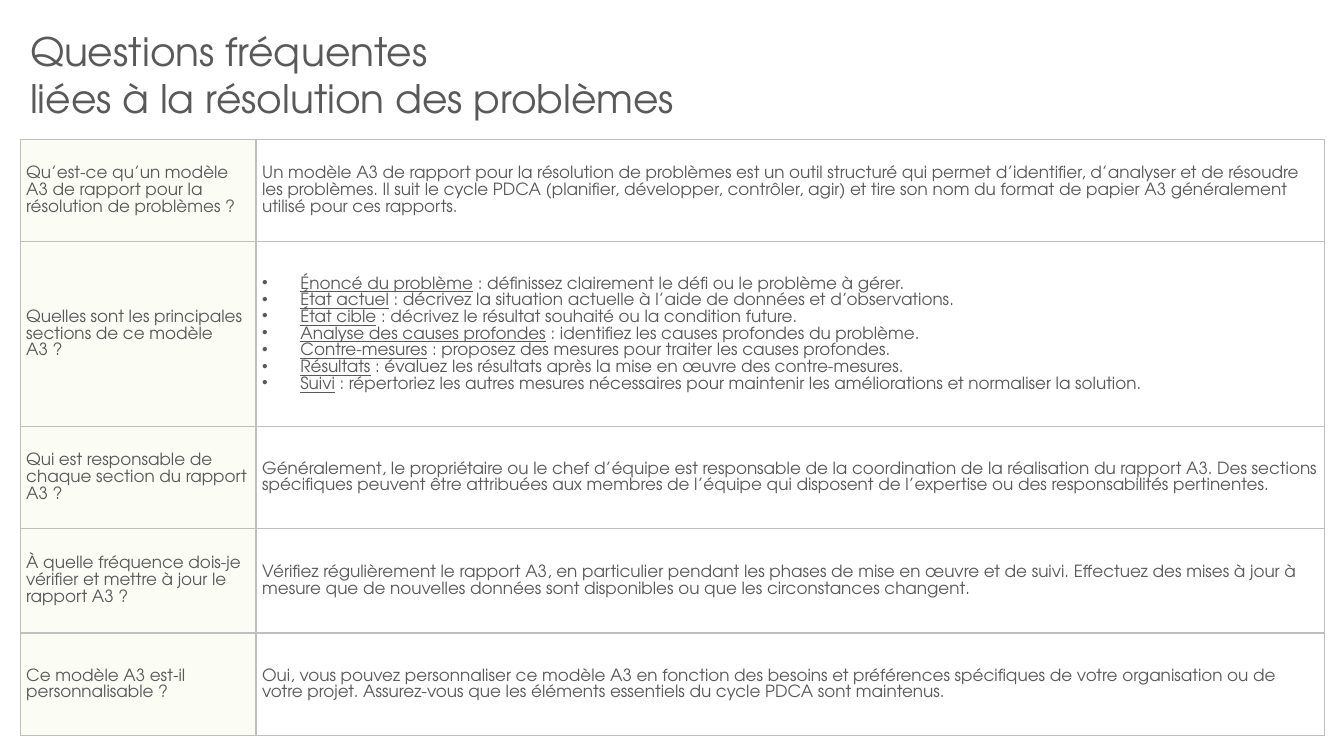
import pptx
import pptx.dml.color
import pptx.enum.text
import pptx.oxml
import pptx.oxml.ns
import pptx.util

Inches = pptx.util.Inches
Pt = pptx.util.Pt

TITLE = ["Questions fréquentes", "liées à la résolution des problèmes"]
COLUMN_WIDTHS = [2.34, 10.6]
ROW_HEIGHTS = [1.02, 1.83, 1.01, 1.04, 1.02]

# Each answer is a paragraph, or a list of (section, explanation) bullets
FAQ = [
    ("Qu’est-ce qu’un modèle A3 de rapport pour la résolution de problèmes ?",
     "Un modèle A3 de rapport pour la résolution de problèmes est un outil structuré qui permet "
     "d’identifier, d’analyser et de résoudre les problèmes. Il suit le cycle PDCA (planifier, "
     "développer, contrôler, agir) et tire son nom du format de papier A3 généralement utilisé "
     "pour ces rapports."),
    ("Quelles sont les principales sections de ce modèle A3 ?", [
        ("Énoncé du problème", "définissez clairement le défi ou le problème à gérer."),
        ("État actuel", "décrivez la situation actuelle à l’aide de données et d’observations."),
        ("État cible", "décrivez le résultat souhaité ou la condition future."),
        ("Analyse des causes profondes", "identifiez les causes profondes du problème."),
        ("Contre-mesures", "proposez des mesures pour traiter les causes profondes."),
        ("Résultats", "évaluez les résultats après la mise en œuvre des contre-mesures."),
        ("Suivi", "répertoriez les autres mesures nécessaires pour maintenir les améliorations "
                  "et normaliser la solution."),
    ]),
    ("Qui est responsable de chaque section du rapport A3 ?",
     "Généralement, le propriétaire ou le chef d’équipe est responsable de la coordination de la "
     "réalisation du rapport A3. Des sections spécifiques peuvent être attribuées aux membres de "
     "l’équipe qui disposent de l’expertise ou des responsabilités pertinentes."),
    ("À quelle fréquence dois-je vérifier et mettre à jour le rapport A3 ?",
     "Vérifiez régulièrement le rapport A3, en particulier pendant les phases de mise en œuvre et "
     "de suivi. Effectuez des mises à jour à mesure que de nouvelles données sont disponibles ou "
     "que les circonstances changent."),
    ("Ce modèle A3 est-il personnalisable ?",
     "Oui, vous pouvez personnaliser ce modèle A3 en fonction des besoins et préférences "
     "spécifiques de votre organisation ou de votre projet. Assurez-vous que les éléments "
     "essentiels du cycle PDCA sont maintenus."),
]


def color(hex_value):
    return pptx.dml.color.RGBColor.from_string(hex_value)


def apply(target, values):
    for name, value in values.items():
        setattr(target, name, value)


class FaqSlide:
    font = "TeX Gyre Adventor"
    ink, rule, question_fill = "595959", "BFBFBF", "FBFDF5"
    cell_format = {
        "vertical_anchor": pptx.enum.text.MSO_ANCHOR.MIDDLE,
        "margin_left": Inches(0.06), "margin_right": Inches(0.06),
        "margin_top": 0, "margin_bottom": 0,
    }

    def __init__(self, slide):
        self.slide = slide

    def run(self, paragraph, text, size, underline=False):
        run = paragraph.add_run()
        run.text = text
        apply(run.font, {"name": self.font, "size": Pt(size), "underline": underline})
        run.font.color.rgb = color(self.ink)

    def title(self, lines, left, top, width, height):
        box = self.slide.shapes.add_textbox(
            Inches(left), Inches(top), Inches(width), Inches(height))
        box.text_frame.word_wrap = True
        heading = box.text_frame.paragraphs[0]
        for index, line in enumerate(lines):
            if index:
                heading.add_line_break()
            self.run(heading, line, 28)

    def bullet(self, paragraph):
        properties = paragraph._p.get_or_add_pPr()
        properties.set("marL", str(Inches(0.38)))
        properties.set("indent", str(-Inches(0.38)))
        properties.append(pptx.oxml.parse_xml(
            f'<a:buChar {pptx.oxml.ns.nsdecls("a")} char="•"/>'))

    def borders(self, cell):
        properties = cell._tc.get_or_add_tcPr()
        for side in "LRTB":
            properties.append(pptx.oxml.parse_xml(
                f'<a:ln{side} {pptx.oxml.ns.nsdecls("a")} w="{Pt(1)}"><a:solidFill>'
                f'<a:srgbClr val="{self.rule}"/></a:solidFill></a:ln{side}>'))

    def cell(self, cell, content, fill=None):
        apply(cell, self.cell_format)
        self.borders(cell)
        if fill:
            cell.fill.solid()
            cell.fill.fore_color.rgb = color(fill)
        else:
            cell.fill.background()
        bulleted = isinstance(content, list)
        for index, item in enumerate(content if bulleted else [content]):
            frame = cell.text_frame
            paragraph = frame.add_paragraph() if index else frame.paragraphs[0]
            paragraph.line_spacing = 1.07
            if bulleted:
                section, explanation = item
                self.bullet(paragraph)
                self.run(paragraph, section, 12, underline=True)
                self.run(paragraph, f" : {explanation}", 12)
            else:
                self.run(paragraph, item, 12)

    def table(self, entries, left, top, widths, heights):
        table = self.slide.shapes.add_table(
            len(heights), len(widths), Inches(left), Inches(top),
            Inches(sum(widths)), Inches(sum(heights))).table
        apply(table, {"first_row": False, "horz_banding": False})
        for column, width in zip(table.columns, widths):
            column.width = Inches(width)
        for row, height, (question, answer) in zip(table.rows, heights, entries):
            row.height = Inches(height)
            self.cell(row.cells[0], question, self.question_fill)
            self.cell(row.cells[1], answer)


def main():
    deck = pptx.Presentation()
    apply(deck, {"slide_width": Inches(13.33), "slide_height": Inches(7.5)})
    faq = FaqSlide(deck.slides.add_slide(deck.slide_layouts[6]))

    # Questions and answers
    faq.table(FAQ, 0.2, 1.38, COLUMN_WIDTHS, ROW_HEIGHTS)

    # Heading
    faq.title(TITLE, 0.2, 0.22, 7.77, 1.04)

    deck.save("out.pptx")


if __name__ == "__main__":
    main()
